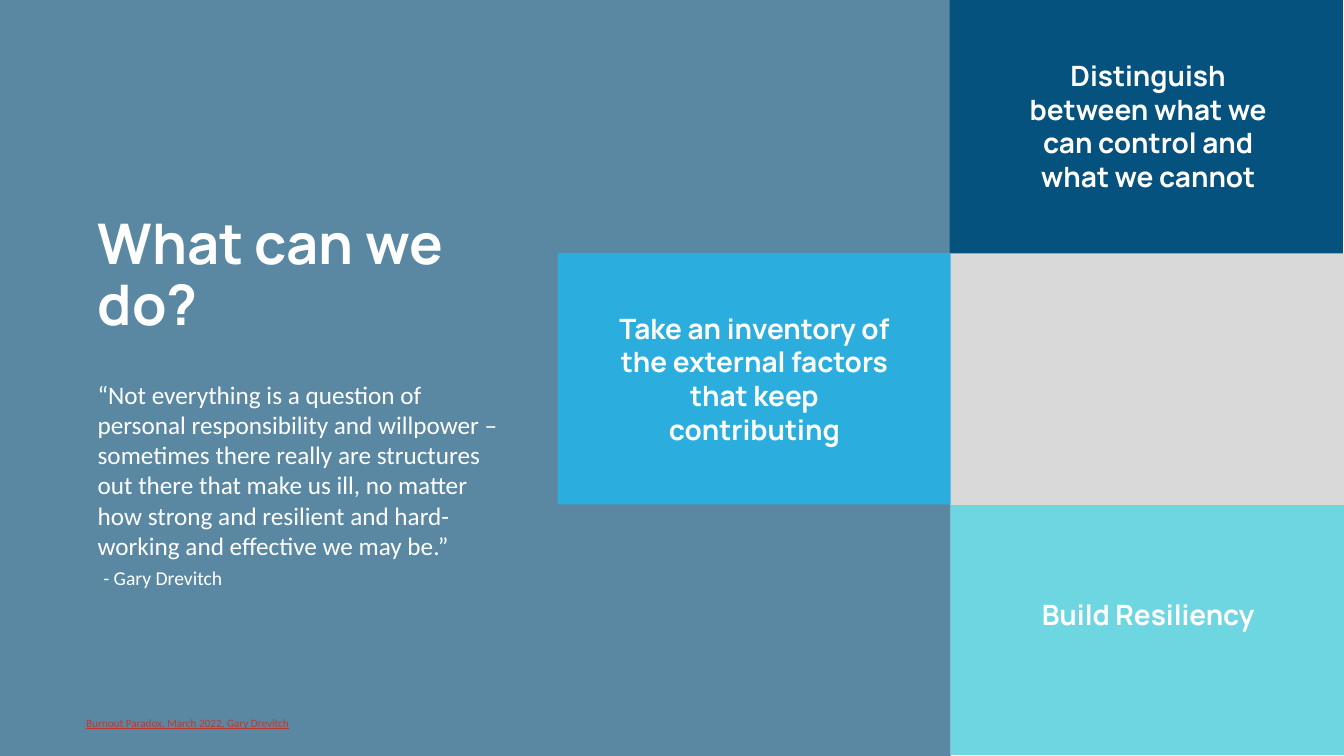
import pptx
import pptx.dml.color
import pptx.enum.shapes
import pptx.enum.text
import pptx.oxml.ns
import pptx.util
from lxml import etree

Cm = pptx.util.Cm
Pt = pptx.util.Pt
RGBColor = pptx.dml.color.RGBColor
ALIGN = pptx.enum.text.PP_ALIGN

WHITE = RGBColor(0xFF, 0xFF, 0xFF)
GREY = RGBColor(0xD9, 0xD9, 0xD9)
NAVY = RGBColor(0x06, 0x52, 0x7F)
BLUE = RGBColor(0x2B, 0xAE, 0xDD)
AQUA = RGBColor(0x6E, 0xD6, 0xE1)
RED = RGBColor(0xBD, 0x39, 0x2F)

deck = pptx.Presentation()
deck.slide_width = Cm(67.72)
deck.slide_height = Cm(38.1)
slide = deck.slides.add_slide(deck.slide_layouts[6])


def add_box(left, top, width, height, color):
    box = slide.shapes.add_shape(
        pptx.enum.shapes.MSO_SHAPE.RECTANGLE,
        Cm(left), Cm(top), Cm(width), Cm(height))
    box.shadow.inherit = False
    box.fill.solid()
    box.fill.fore_color.rgb = color
    box.line.fill.background()
    return box


def add_text(left, top, width, height, paras, font, color=WHITE,
             bold=False, align=ALIGN.LEFT, space=1.0, under=False):
    box = slide.shapes.add_textbox(Cm(left), Cm(top), Cm(width), Cm(height))
    frame = box.text_frame
    frame.word_wrap = True
    for n, runs in enumerate(paras):
        para = frame.add_paragraph() if n else frame.paragraphs[0]
        para.alignment = align
        para.line_spacing = space
        for text, size in runs:
            run = para.add_run()
            run.text = text
            run.font.name = font
            run.font.size = Pt(size)
            run.font.bold = bold
            run.font.underline = under
            run.font.color.rgb = color


split = 47.9
wide = 19.82
tall = 12.67

add_box(0, 0, split, 38.1, GREY)
veil = add_box(0, 0, split, 38.1, NAVY)
tint = veil.fill._xPr.find(".//" + pptx.oxml.ns.qn("a:srgbClr"))
etree.SubElement(tint, pptx.oxml.ns.qn("a:alpha"), val="60000")

for left, top, height, color in [
    (split - 0.05, 0, 14.53, NAVY),
    (split - wide + 0.03, 12.75, tall, BLUE),
    (split, 25.38, tall, AQUA),
    (split, 12.77, tall, GREY),
]:
    add_box(left, top, wide, height, color)

add_text(4.67, 10.77, 20.7, 8.2, [[("What can we do?", 80)]],
         "Manrope", bold=True, space=0.9)

quote = (
    "“Not everything is a question of personal responsibility and willpower – "
    "sometimes there really are structures out there that make us ill, "
    "no matter how strong and resilient and hard-working and effective "
    "we may be.”"
)
add_text(4.67, 18.97, 20.7, 11.02,
         [[(quote, 36)], [(" ", 36), ("- Gary Drevitch", 28)]],
         "Calibri", space=Pt(43.2))

for left, top, height, text in [
    (50.65, 2.84, 7.09, "Distinguish between what we can control and what we cannot"),
    (50.65, 30, 1.96, "Build Resiliency"),
    (30.81, 15.57, 7.09,
     "Take an inventory of the external factors that keep contributing"),
]:
    add_text(left, top, 14.4, height, [[(text, 40)]], "Manrope",
             bold=True, align=ALIGN.CENTER, space=Pt(48))

add_text(4.09, 35.97, 11.53, 0.94,
         [[("Burnout Paradox, March 2022, Gary Drevitch", 16)]],
         "Calibri", RED, under=True)

deck.save("out.pptx")
